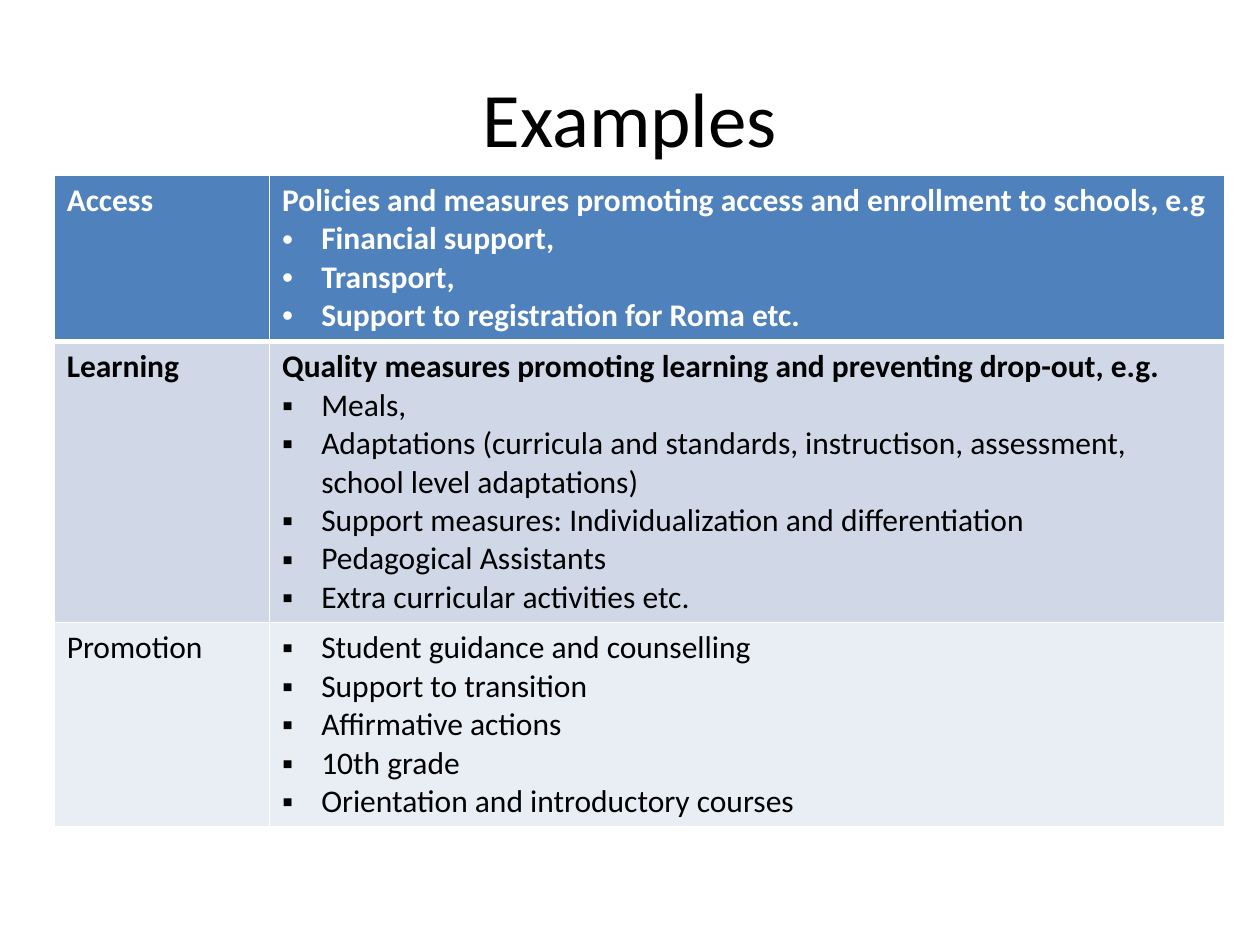
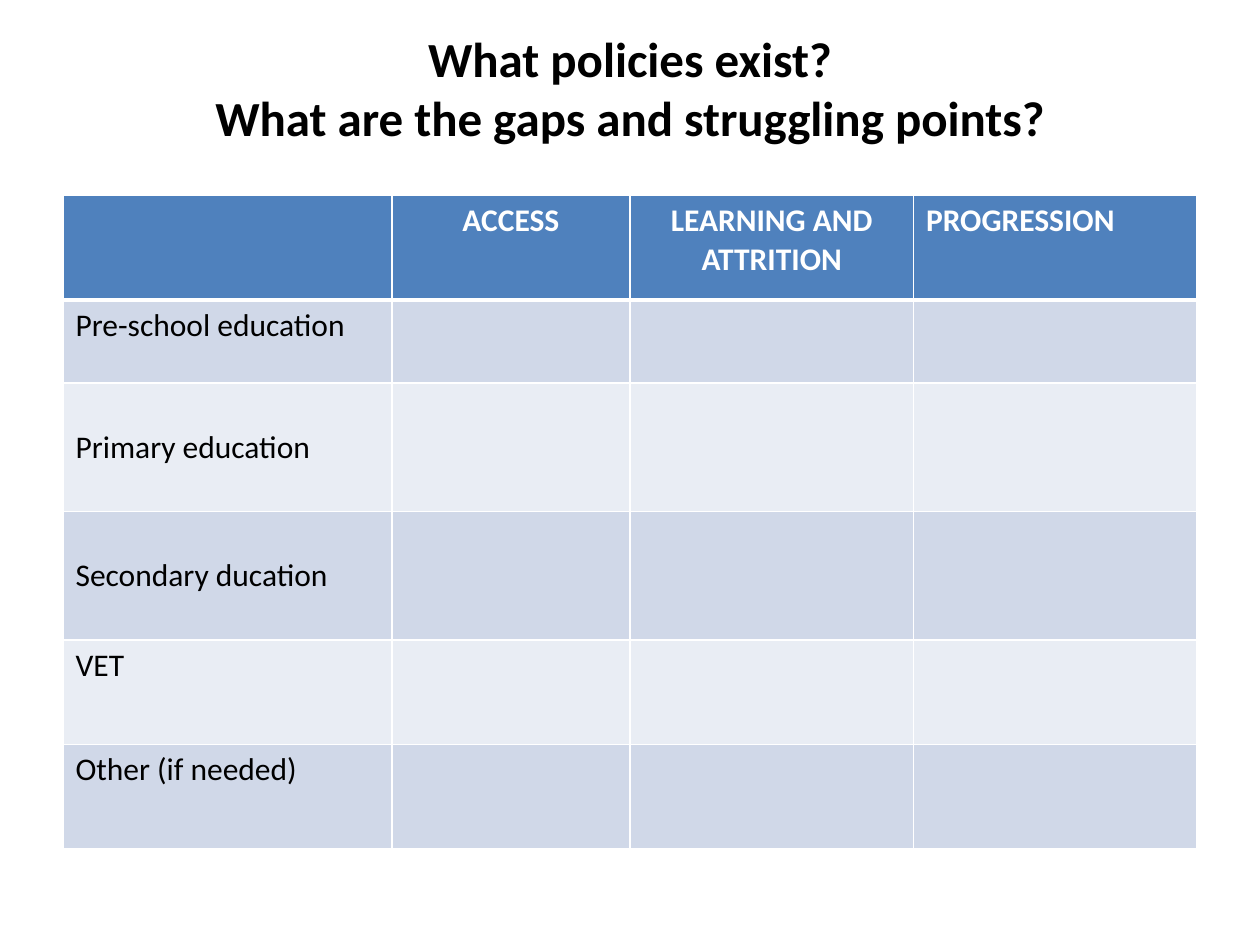
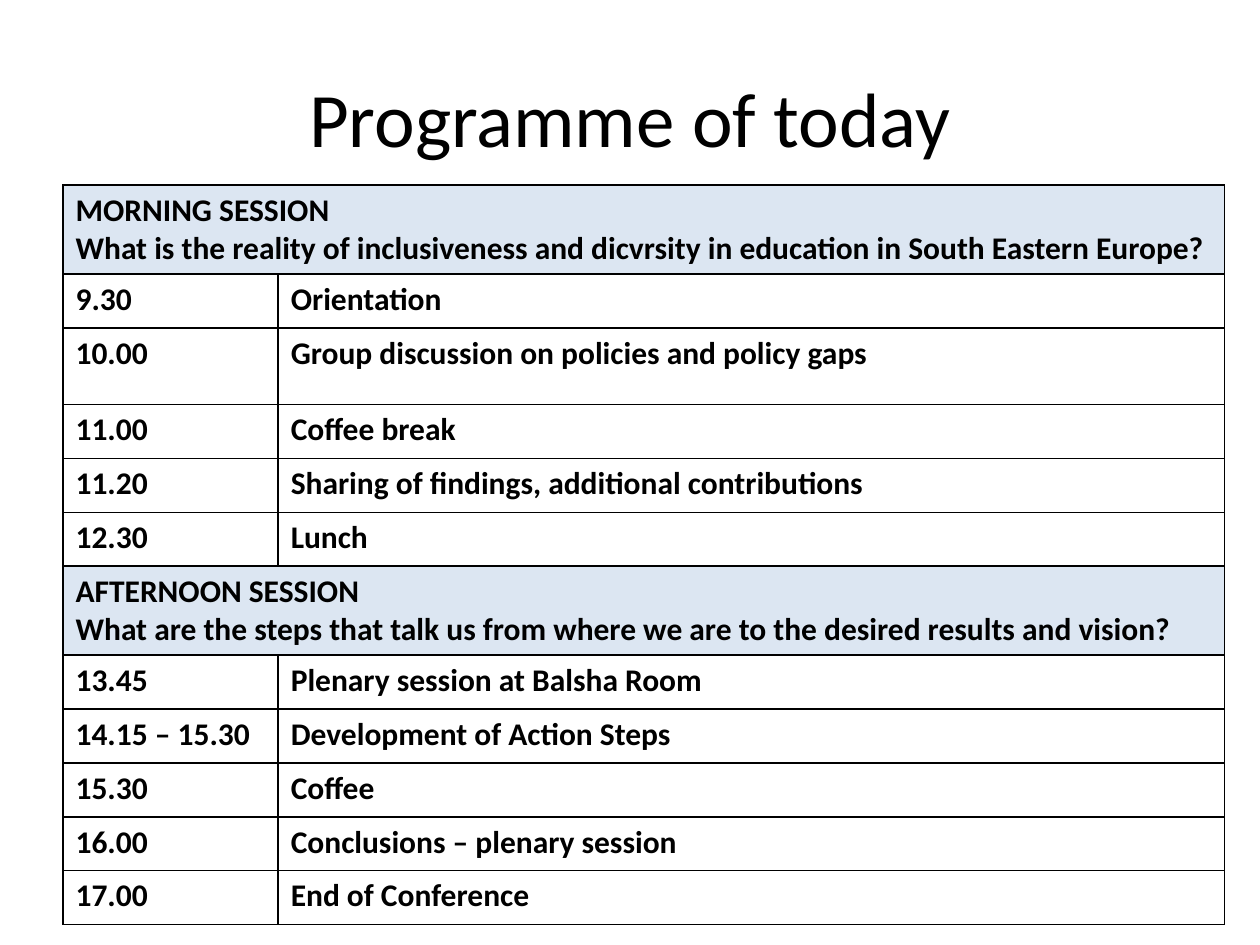
from dataclasses import dataclass

from lxml import etree
from pptx import Presentation
from pptx.dml.color import RGBColor as RGB
from pptx.enum.text import MSO_ANCHOR as ANCHOR, PP_ALIGN as ALIGN
from pptx.oxml.ns import qn
from pptx.util import Inches, Pt


@dataclass(frozen=True)
class Theme:
    font: str = "Calibri"
    ink: str = "000000"
    paper: str = "FFFFFF"
    header: str = "4F81BD"
    band_dark: str = "D0D8E8"
    band_light: str = "E9EDF4"
    session: str = "DCE6F2"
    title_size: int = 44
    question_size: int = 28
    body_size: int = 18
    rule: int = 1
    header_rule: int = 3


@dataclass(frozen=True)
class Line:
    text: str
    bold: bool = False
    bullet: str = ""
    align: ALIGN = ALIGN.LEFT


THEME = Theme()
SLIDE_W, SLIDE_H = Inches(10), Inches(7.5)
UNIT = SLIDE_W / 100  # the slide is a grid of 100 columns and 75 rows
TITLE_BOX = (5, 3, 90, 12.5)
LINE_HEIGHT = 1.2
HANGING = Inches(0.31)


def grid(*cells):
    return [round(c * UNIT) for c in cells]


def split(total, weights):
    return [round(total * w / sum(weights)) for w in weights]


def bold(*texts, align=ALIGN.LEFT):
    return [Line(t, bold=True, align=align) for t in texts]


def bullets(mark, *texts, bold=False):
    return [Line(t, bold, mark) for t in texts]


def add_bullet(p, mark):
    pPr = p._p.get_or_add_pPr()
    pPr.set("marL", str(HANGING))
    pPr.set("indent", str(-HANGING))
    etree.SubElement(pPr, qn("a:buFont"), typeface="Arial")
    etree.SubElement(pPr, qn("a:buChar"), char=mark)


def write(tf, lines, size, color):
    for i, line in enumerate(lines):
        p = tf.add_paragraph() if i else tf.paragraphs[0]
        p.alignment = line.align
        if line.bullet:
            add_bullet(p, line.bullet)
        r = p.add_run()
        r.text = line.text
        r.font.color.rgb = RGB.from_string(color)
        for name, value in dict(name=THEME.font, size=Pt(size), bold=line.bold).items():
            setattr(r.font, name, value)


def add_title(slide, lines, size, spare_lines=0):
    """Centre the lines in the title box, keeping spare lines free below them."""
    tf = slide.shapes.add_textbox(*grid(*TITLE_BOX)).text_frame
    bottom = Inches(0.05) + Pt(spare_lines * size * LINE_HEIGHT)
    for name, value in dict(word_wrap=True, vertical_anchor=ANCHOR.MIDDLE,
                            margin_bottom=bottom).items():
        setattr(tf, name, value)
    write(tf, lines, size, THEME.ink)


def add_table(slide, box, col_weights, row_weights):
    x, y, w, h = grid(*box)
    table = slide.shapes.add_table(len(row_weights), len(col_weights), x, y, w, h).table
    table.first_row = table.horz_banding = False
    for col, width in zip(table.columns, split(w, col_weights)):
        col.width = width
    for row, height in zip(table.rows, split(h, row_weights)):
        row.height = height
    return table


def set_borders(cell, color, top=THEME.rule, bottom=THEME.rule):
    tcPr = cell._tc.get_or_add_tcPr()
    widths = dict(lnL=THEME.rule, lnR=THEME.rule, lnT=top, lnB=bottom)
    for i, (side, width) in enumerate(widths.items()):
        ln = etree.Element(qn(f"a:{side}"), w=str(Pt(width)))
        fill = etree.SubElement(ln, qn("a:solidFill"))
        etree.SubElement(fill, qn("a:srgbClr"), val=color)
        tcPr.insert(i, ln)


def set_fill(cell, color):
    cell.fill.solid()
    cell.fill.fore_color.rgb = RGB.from_string(color)


def fill_banded(table, rows):
    """Write the rows under a coloured header, on alternating bands."""
    for i, row in enumerate(rows):
        header = i == 0
        fill = THEME.header if header else (THEME.band_light, THEME.band_dark)[i % 2]
        for j, cell in enumerate(table.rows[i].cells):
            set_fill(cell, fill)
            set_borders(cell, THEME.paper,
                        top=THEME.header_rule if i == 1 else THEME.rule,
                        bottom=THEME.header_rule if header else THEME.rule)
            if j < len(row):
                write(cell.text_frame, row[j], THEME.body_size,
                      THEME.paper if header else THEME.ink)


def examples_slide(slide):
    add_title(slide, [Line("Examples")], THEME.title_size)
    rows = [
        [bold("Access"),
         bold("Policies and measures promoting access and enrollment to schools, e.g")
         + bullets("•", "Financial support,", "Transport,",
                   "Support to registration for Roma etc.", bold=True)],
        [bold("Learning"),
         bold("Quality measures promoting learning and preventing drop-out, e.g.")
         + bullets("▪", "Meals,",
                   "Adaptations (curricula and standards, instructison, assessment, "
                   "school level adaptations)",
                   "Support measures: Individualization and differentiation",
                   "Pedagogical Assistants", "Extra curricular activities etc.")],
        [[Line("Promotion")],
         bullets("▪", "Student guidance and counselling", "Support to transition",
                 "Affirmative actions", "10th grade",
                 "Orientation and introductory courses")],
    ]
    table = add_table(slide, (4.3, 13.9, 92.9, 51.7), (1.71, 7.58), (1.32, 2.23, 1.62))
    fill_banded(table, rows)


def policies_slide(slide):
    add_title(slide, bold("What policies exist?", "What are the gaps and struggling points?",
                          align=ALIGN.CENTER),
              THEME.question_size, spare_lines=1)
    levels = ["Pre-school education", "Primary education", "Secondary ducation",
              "VET", "Other (if needed)"]
    header = [[], bold("ACCESS", align=ALIGN.CENTER),
              bold("LEARNING AND ATTRITION", align=ALIGN.CENTER), bold("PROGRESSION")]
    table = add_table(slide, (5, 15.5, 90, 51.9), (2.61, 1.89, 2.25, 2.25),
                      (0.83, 0.66, 1.02, 1.02, 0.83, 0.83))
    fill_banded(table, [header] + [[[Line(level)]] for level in levels])
    for i in (2, 3):
        table.cell(i, 0).vertical_anchor = ANCHOR.MIDDLE


def programme_slide(slide):
    add_title(slide, [Line("Programme of today")], THEME.title_size)
    session, item, tall_item = 0.71, 0.43, 0.61
    agenda = [
        (session, "MORNING SESSION",
         "What is the reality of inclusiveness and dicvrsity in education in "
         "South Eastern Europe?"),
        (item, "9.30", "Orientation"),
        (tall_item, "10.00", "Group discussion on policies and policy gaps"),
        (item, "11.00", "Coffee break"),
        (item, "11.20", "Sharing of findings, additional contributions"),
        (item, "12.30", "Lunch"),
        (session, "AFTERNOON SESSION",
         "What are the steps that talk us from where we are to the desired results "
         "and vision?"),
        (item, "13.45", "Plenary session at Balsha Room"),
        (item, "14.15 – 15.30", "Development of Action Steps"),
        (item, "15.30", "Coffee"),
        (item, "16.00", "Conclusions – plenary session"),
        (item, "17.00", "End of Conference"),
    ]
    table = add_table(slide, (5, 14.7, 92.2, 58.7), (1.71, 7.52), [a[0] for a in agenda])
    for row, (height, start, topic) in zip(table.rows, agenda):
        first, second = row.cells
        if height == session:
            first.merge(second)
            texts = [(first, bold(start, topic))]
        else:
            texts = [(first, bold(start)), (second, bold(topic))]
        for cell in row.cells:
            if height == session:
                set_fill(cell, THEME.session)
            else:
                cell.fill.background()
            set_borders(cell, THEME.ink)
        for cell, lines in texts:
            write(cell.text_frame, lines, THEME.body_size, THEME.ink)


def main():
    prs = Presentation()
    prs.slide_width, prs.slide_height = SLIDE_W, SLIDE_H
    for build in (examples_slide, policies_slide, programme_slide):
        slide = prs.slides.add_slide(prs.slide_layouts[6])
        slide.background.fill.solid()
        slide.background.fill.fore_color.rgb = RGB.from_string(THEME.paper)
        build(slide)
    prs.save("out.pptx")


# Single-line titles are centred like the two-line one.
def centred(builder_title):
    def wrapped(slide, lines, size, spare_lines=0):
        lines = [Line(l.text, l.bold, l.bullet, ALIGN.CENTER) for l in lines]
        builder_title(slide, lines, size, spare_lines)
    return wrapped


add_title = centred(add_title)

if __name__ == "__main__":
    main()
